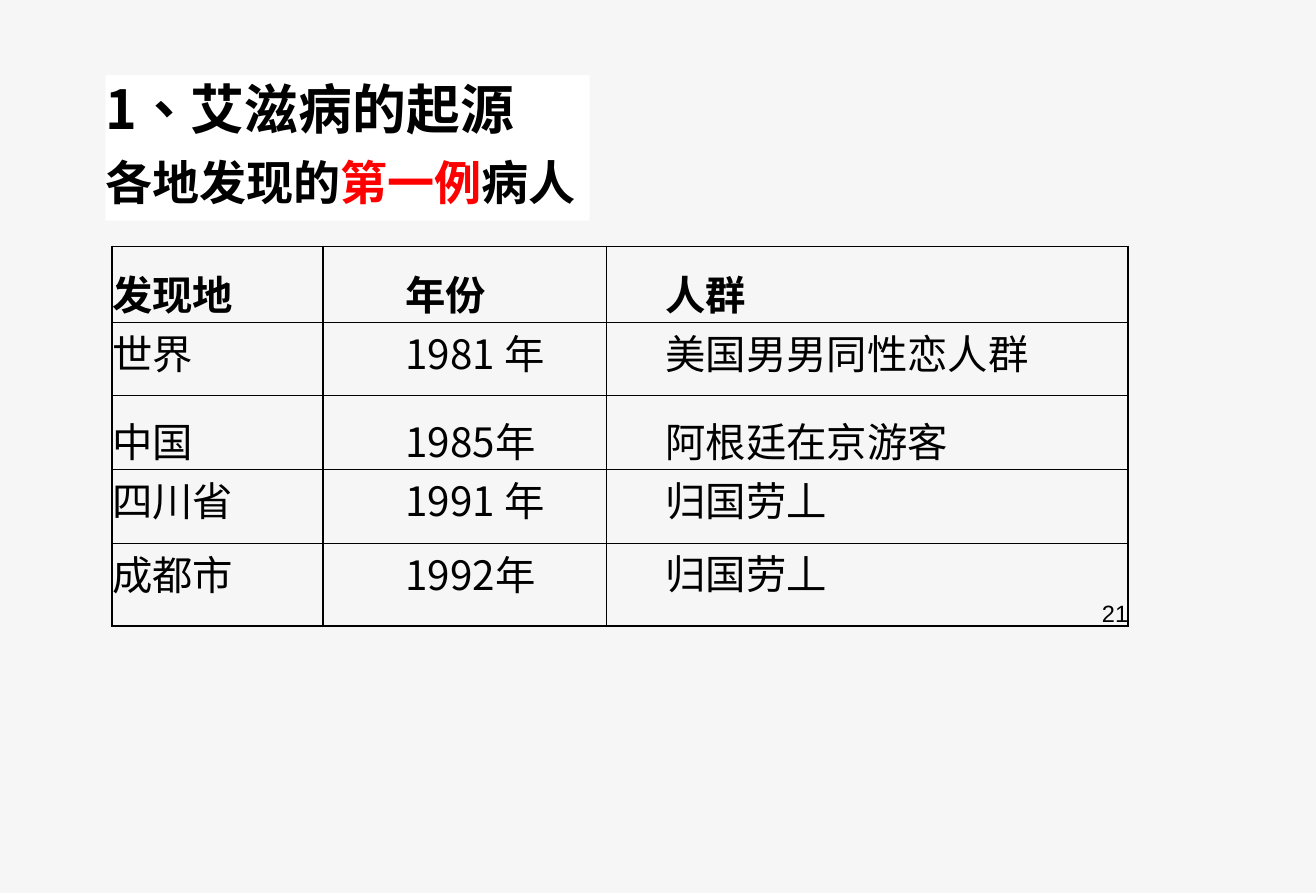
from lxml import etree
from pptx import Presentation
from pptx.dml.color import RGBColor
from pptx.enum.lang import MSO_LANGUAGE_ID
from pptx.enum.text import MSO_ANCHOR, PP_ALIGN
from pptx.oxml.ns import qn
from pptx.util import Cm, Pt

TOP, BOTTOM = MSO_ANCHOR.TOP, MSO_ANCHOR.BOTTOM
RIGHT = PP_ALIGN.RIGHT
TRADITIONAL = MSO_LANGUAGE_ID.TRADITIONAL_CHINESE

CJK_FONT = "Noto Sans CJK SC"
BLACK, RED, WHITE, PAPER = "000000", "FF0000", "FFFFFF", "F6F6F6"

COLUMN_WIDTHS = [4.43, 5.94, 10.95]
ROW_HEIGHTS = [1.6, 1.53, 1.55, 1.55, 1.74]
# Left margin and first-line indent of each column, in cm
COLUMN_INDENTS = [(0, 0), (1.73, 0), (0, 1.24)]
BOTTOM_ROWS = (0, 2)
CASES = [
    ["发现地", "年份", "人群"],
    ["世界", "1981 年", "美国男男同性恋人群"],
    ["中国", "1985年", "阿根廷在京游客"],
    ["四川省", "1991 年", "归国劳丄"],
    ["成都市", "1992年", "归国劳丄"],
]
NO_MARGINS = dict.fromkeys(
    ["margin_left", "margin_top", "margin_right", "margin_bottom"], 0)


def colour(value):
    return RGBColor.from_string(value)


def apply_format(target, values):
    for name, value in values.items():
        setattr(target, name, value)


def add_span(para, text, size, bold=False, ink=BLACK, font=CJK_FONT):
    span = para.add_run()
    span.text = text
    apply_format(span.font, {"name": font, "size": Pt(size), "bold": bold})
    span.font.color.rgb = colour(ink)
    east_asian = etree.SubElement(span.font._element, qn("a:ea"))
    east_asian.set("typeface", font)
    return span


def indent_para(para, left, first_line):
    properties = para._p.get_or_add_pPr()
    properties.set("marL", str(Cm(left)))
    properties.set("indent", str(Cm(first_line)))


def add_border(cell, side):
    line = etree.SubElement(cell._tc.get_or_add_tcPr(), qn("a:ln" + side))
    line.set("w", str(Pt(1)))
    fill = etree.SubElement(line, qn("a:solidFill"))
    etree.SubElement(fill, qn("a:srgbClr")).set("val", BLACK)


def add_heading(page):
    box = page.shapes.add_textbox(Cm(2.21), Cm(1.58), Cm(10.16), Cm(3.05))
    box.fill.solid()
    box.fill.fore_color.rgb = colour(WHITE)
    frame = box.text_frame
    apply_format(frame, {"word_wrap": True, **NO_MARGINS})
    title = frame.paragraphs[0]
    title.space_after = Pt(8.4)
    # Traditional setting centres the enumeration comma
    span = add_span(title, "1、艾滋病的起源", 32, bold=True)
    span.font.language_id = TRADITIONAL
    subtitle = frame.add_paragraph()
    for text, ink in [("各地发现的", BLACK), ("第一例", RED), ("病人", BLACK)]:
        add_span(subtitle, text, 28, bold=True, ink=ink)


def fill_cell(cell, text, row, column):
    is_last = (row, column) == (len(CASES) - 1, len(CASES[0]) - 1)
    at_bottom = row in BOTTOM_ROWS or is_last
    anchor = BOTTOM if at_bottom else TOP
    apply_format(cell, {"vertical_anchor": anchor, **NO_MARGINS})
    para = cell.text_frame.paragraphs[0]
    indent_para(para, *COLUMN_INDENTS[column])
    if not at_bottom:
        para.space_before = Pt(3.5)
    add_span(para, text, 24, bold=row == 0)

    # Borders come before the fill in the cell properties
    for side in "LRTB":
        add_border(cell, side)
    cell.fill.background()


def add_case_table(page):
    table = page.shapes.add_table(
        len(CASES), len(CASES[0]), Cm(2.35), Cm(5.17),
        Cm(sum(COLUMN_WIDTHS)), Cm(sum(ROW_HEIGHTS))).table
    apply_format(table, {"first_row": False, "horz_banding": False})
    for column, width in zip(table.columns, COLUMN_WIDTHS):
        column.width = Cm(width)
    for row, height in zip(table.rows, ROW_HEIGHTS):
        row.height = Cm(height)
    for row, texts in enumerate(CASES):
        for column, text in enumerate(texts):
            fill_cell(table.cell(row, column), text, row, column)

    # Page number inside the last cell
    last_cell = table.cell(len(CASES) - 1, len(CASES[0]) - 1)
    number = last_cell.text_frame.add_paragraph()
    apply_format(number, {"alignment": RIGHT, "line_spacing": 0.96})
    add_span(number, "21", 14, font="Arial")


def main():
    deck = Presentation()
    apply_format(deck, {"slide_width": Cm(27.61), "slide_height": Cm(18.74)})
    page = deck.slides.add_slide(deck.slide_layouts[6])
    page.background.fill.solid()
    page.background.fill.fore_color.rgb = colour(PAPER)
    add_heading(page)
    add_case_table(page)
    deck.save("out.pptx")


if __name__ == "__main__":
    main()
